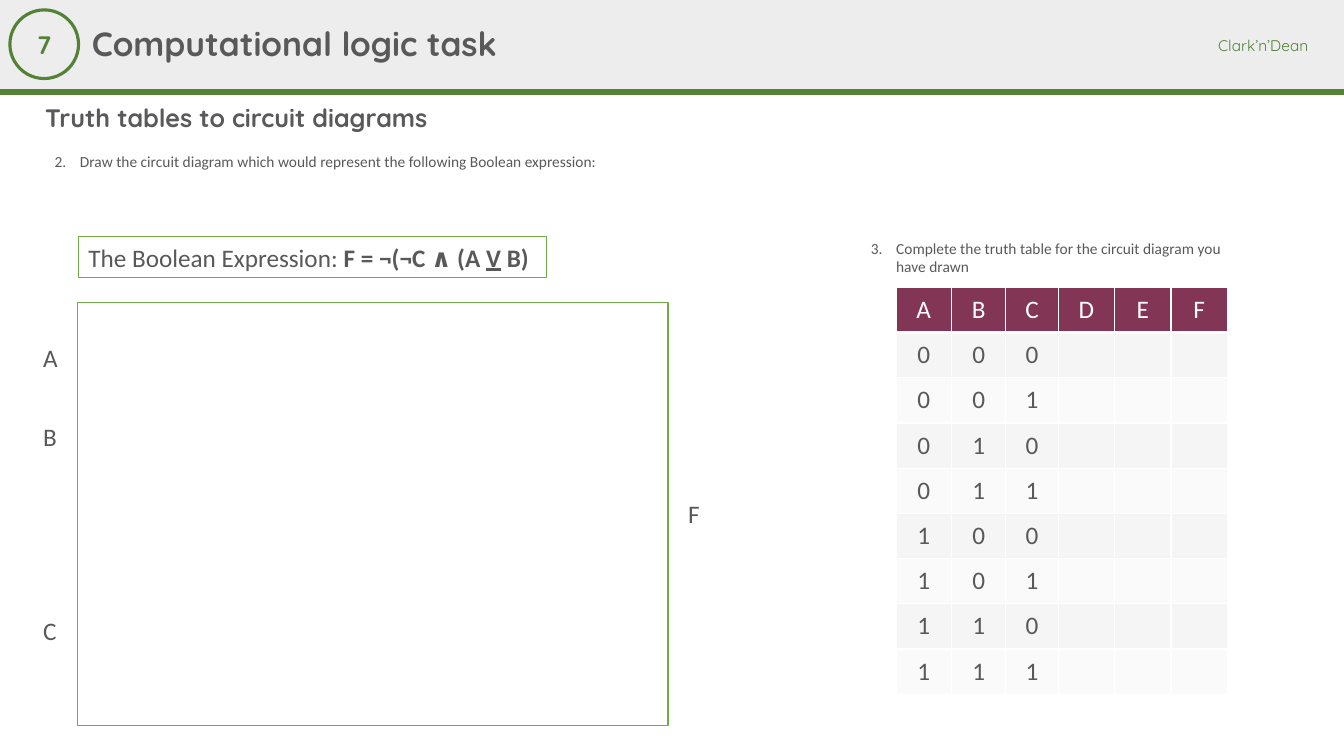
from itertools import product

from lxml import etree
from pptx import Presentation
from pptx.dml.color import RGBColor
from pptx.enum import shapes, text
from pptx.oxml import ns
from pptx.util import Cm, Pt

GREEN = RGBColor(0x53, 0x81, 0x35)
LIGHT_GREEN = RGBColor(0x70, 0xAD, 0x47)
GREY = RGBColor(0x59, 0x59, 0x59)
BAND = RGBColor(0xED, 0xED, 0xED)
PLUM = RGBColor(0x82, 0x35, 0x54)
WHITE = RGBColor(0xFF, 0xFF, 0xFF)
ROW_FILLS = (RGBColor(0xF6, 0xF5, 0xF5), RGBColor(0xFA, 0xFA, 0xFA))

LEFT, CENTER = text.PP_ALIGN.LEFT, text.PP_ALIGN.CENTER
TOP, MIDDLE = text.MSO_ANCHOR.TOP, text.MSO_ANCHOR.MIDDLE
HEADING = {"name": "Quicksand", "size": Pt(24), "bold": True}
SUBHEADING = {**HEADING, "size": Pt(18)}
CREDIT = {"name": "Quicksand", "size": Pt(11)}
BODY = {"name": "Calibri", "size": Pt(18)}
QUESTION = {**BODY, "size": Pt(11)}


class TaskSlide:
    """Holds the current slide and draws each kind of element in its style."""

    def __init__(self, prs):
        self.s = prs.slides.add_slide(prs.slide_layouts[3])

    def add_run(self, p, words, fmt, color):
        r = p.add_run()
        r.text = words
        for key, value in fmt.items():
            setattr(r.font, key, value)
        r.font.color.rgb = color

    def set_text(self, tf, runs, fmt, color=GREY, anchor=TOP, align=LEFT,
                 wrap=True, spacing=1.0):
        """Fill a frame with one paragraph of (text, extra format) runs."""
        tf.auto_size = text.MSO_AUTO_SIZE.NONE
        tf.word_wrap, tf.vertical_anchor = wrap, anchor
        p = tf.paragraphs[0]
        p.alignment, p.line_spacing, p.space_before = align, spacing, Pt(0)
        for words, extra in runs:
            self.add_run(p, words, {**fmt, **extra}, color)

    def label(self, box, words, fmt, **style):
        sp = self.s.shapes.add_textbox(*map(Cm, box))
        self.set_text(sp.text_frame, [(words, {})], fmt, **style)

    def placeholder(self, index, box, words, fmt, **style):
        sp = self.s.placeholders[index]
        sp.left, sp.top, sp.width, sp.height = map(Cm, box)
        sp.element.getparent().append(sp.element)  # in front of the header
        self.set_text(sp.text_frame, [(words, {})], fmt, **style)
        return sp

    def question(self, index, number, box, words):
        sp = self.placeholder(index, box, words, QUESTION)
        pPr = sp.text_frame.paragraphs[0]._p.get_or_add_pPr()
        pPr.set("marL", str(Cm(0.64)))
        pPr.set("indent", str(-Cm(0.64)))
        etree.SubElement(pPr, ns.qn("a:buFont"), typeface="+mj-lt")
        etree.SubElement(pPr, ns.qn("a:buAutoNum"), type="arabicPeriod",
                         startAt=str(number))

    def shape(self, kind, box, fill=None, line=None, width=1.0):
        sp = self.s.shapes.add_shape(kind, *map(Cm, box))
        sp.shadow.inherit = False
        if fill is None:
            sp.fill.background()
        else:
            sp.fill.solid()
            sp.fill.fore_color.rgb = fill
        if line is None:
            sp.line.fill.background()
        else:
            sp.line.color.rgb, sp.line.width = line, Pt(width)
        return sp

    def rule(self, x1, y1, x2, y2, color, width):
        line = self.s.shapes.add_connector(
            shapes.MSO_CONNECTOR.STRAIGHT, Cm(x1), Cm(y1), Cm(x2), Cm(y2))
        line.line.color.rgb, line.line.width = color, Pt(width)
        etree.SubElement(line.element.spPr, ns.qn("a:effectLst"))

    def cell(self, cell, words, color, fill, bottom):
        tcPr = cell._tc.get_or_add_tcPr()
        for side, width in {"L": 1, "R": 1, "T": 1, "B": bottom}.items():
            ln = etree.SubElement(tcPr, ns.qn(f"a:ln{side}"), w=str(Pt(width)))
            solid = etree.SubElement(ln, ns.qn("a:solidFill"))
            etree.SubElement(solid, ns.qn("a:srgbClr"), val=str(WHITE))
        cell.fill.solid()
        cell.fill.fore_color.rgb = fill
        cell.vertical_anchor = MIDDLE
        if words:
            p = cell.text_frame.paragraphs[0]
            p.alignment = CENTER
            self.add_run(p, words, BODY, color)

    def truth_table(self, left, top, widths, row_height, names, rows):
        table = self.s.shapes.add_table(
            len(rows) + 1, len(names), Cm(left), Cm(top),
            Cm(sum(widths)), Cm(row_height * (len(rows) + 1))).table
        for column, width in zip(table.columns, widths):
            column.width = Cm(width)
        for row in table.rows:
            row.height = Cm(row_height)
        for j, name in enumerate(names):
            self.cell(table.cell(0, j), name, WHITE, PLUM, 3)
            for i, values in enumerate(rows):
                value = values[j] if j < len(values) else ""
                self.cell(table.cell(i + 1, j), value, GREY, ROW_FILLS[i % 2], 1)


def main():
    prs = Presentation()
    prs.slide_width, prs.slide_height = Cm(33.87), Cm(19.05)
    task = TaskSlide(prs)
    rect, oval = shapes.MSO_SHAPE.RECTANGLE, shapes.MSO_SHAPE.OVAL

    # Header
    task.shape(rect, (0, 0, 33.87, 2.31), fill=BAND)
    task.rule(0, 2.31, 33.87, 2.31, GREEN, 4.5)
    task.label((30.45, 0.79, 3.1, 0.74), "Clark’n’Dean", CREDIT,
               color=GREEN, wrap=False)
    badge = task.shape(oval, (0.25, 0.25, 1.73, 1.73), line=GREEN, width=2.25)
    task.set_text(badge.text_frame, [("7", {})], SUBHEADING, color=GREEN,
                  anchor=MIDDLE, align=CENTER)
    task.placeholder(0, (2.06, 0.23, 26.19, 1.85), "Computational logic task",
                     HEADING, anchor=MIDDLE, spacing=0.9)
    task.label((0.89, 2.51, 14.5, 1.02), "Truth tables to circuit diagrams",
               SUBHEADING, anchor=MIDDLE, spacing=0.9)

    # Circuit question
    task.question(1, 2, (1.12, 3.71, 15.82, 0.74),
                  "Draw the circuit diagram which would represent "
                  "the following Boolean expression:")
    expression = task.shape(rect, (1.98, 5.97, 11.79, 1.02),
                            line=LIGHT_GREEN, width=0.75)
    bold = {"bold": True}
    task.set_text(expression.text_frame,
                  [("The Boolean Expression: ", {}), ("F = ¬(¬C ∧ (A ", bold),
                   ("V", {**bold, "underline": True}), (" B)", bold)], BODY)
    task.shape(rect, (1.96, 7.62, 14.88, 10.67), line=LIGHT_GREEN)
    for name, x, y in (("A", 0.84, 8.51), ("B", 0.84, 10.49),
                       ("C", 0.84, 15.37), ("F", 17.09, 12.42)):
        task.label((x, y, 0.89, 1.02), name, BODY, wrap=False)

    # Truth table question
    task.question(2, 3, (21.69, 5.89, 9.78, 1.19),
                  "Complete the truth table for the circuit diagram "
                  "you have drawn")
    task.truth_table(22.58, 7.24, (1.4, 1.37, 1.32, 1.42, 1.42, 1.42), 1.14,
                     "ABCDEF", list(product("01", repeat=3)))

    prs.save("out.pptx")


if __name__ == "__main__":
    main()
